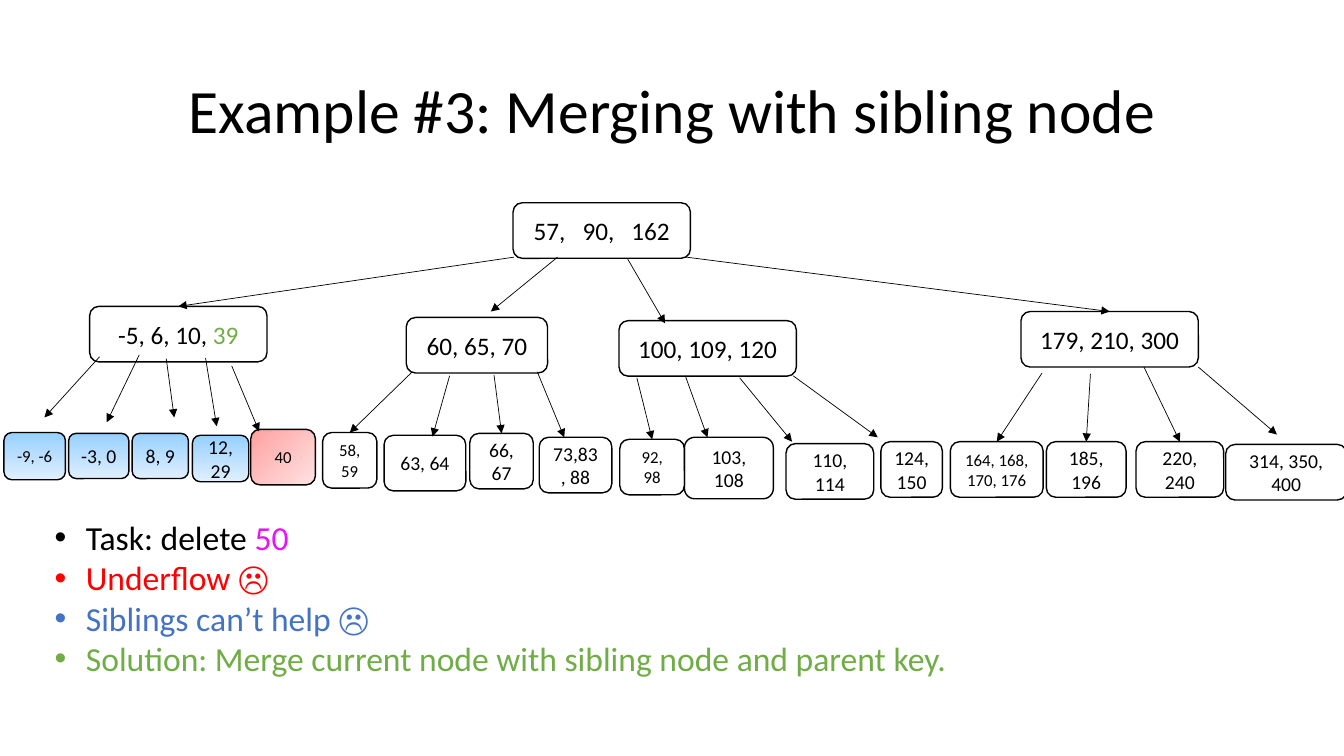
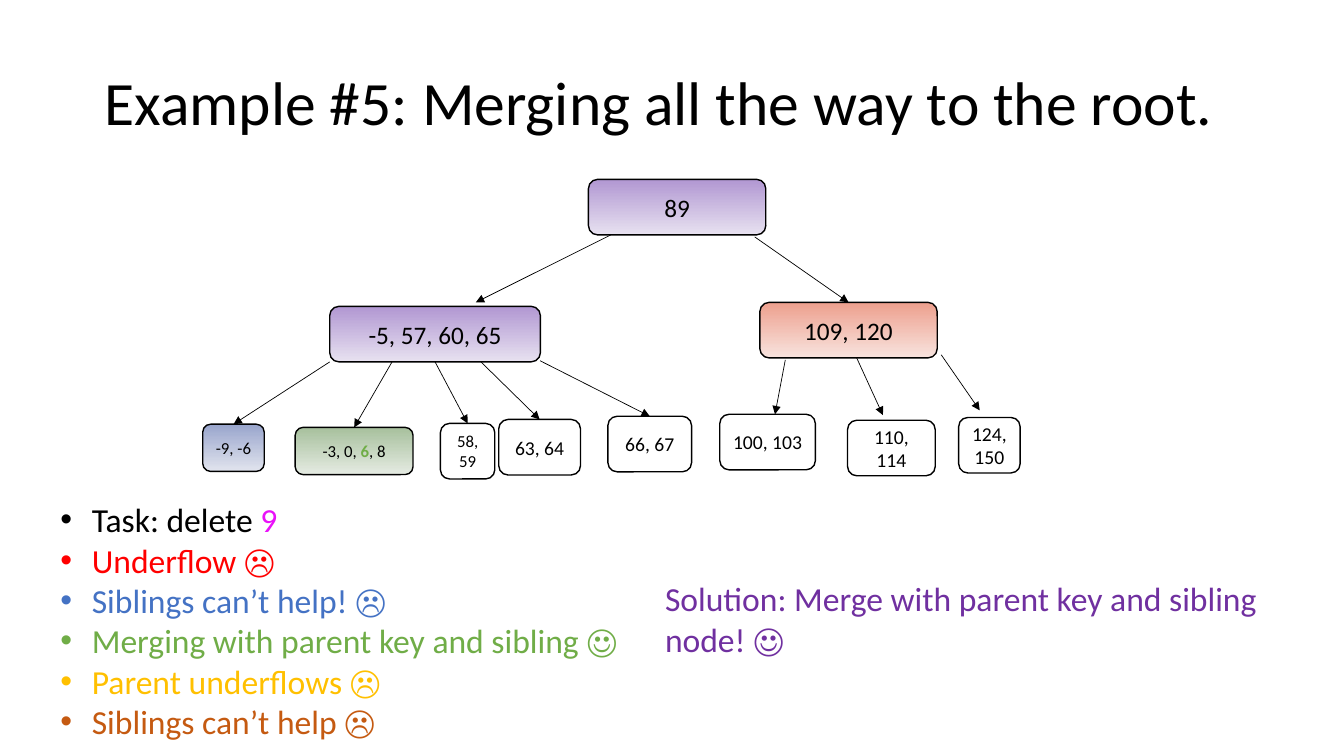
from lxml.etree import SubElement
from pptx import Presentation
from pptx.dml.color import RGBColor
from pptx.enum.shapes import MSO_CONNECTOR, MSO_SHAPE
from pptx.enum.text import MSO_ANCHOR, MSO_AUTO_SIZE, PP_ALIGN
from pptx.oxml.ns import qn
from pptx.util import Cm, Pt

FONT = "Calibri"
HUES = {
    "ink": "000000", "pink": "E911F9", "red": "FF0000", "blue": "4472C4",
    "green": "70AD47", "gold": "FFC000", "rust": "C55A11", "plum": "7030A0",
}
FADES = {
    "sky": ("96D0FF", "E0EFFF", 270),
    "rose": ("FFA0A0", "FFE3E3", 315),
    "lilac": ("B197D2", "E7E1F0", 270),
    "coral": ("EDA08E", "F8E3DE", 270),
    "slate": ("99A5CC", "E1E4EE", 270),
    "sage": ("A7C09D", "E5EBE2", 270),
}
FRAME = Cm(1.4)
INDENT = Cm(0.79)


def write(par, size, runs):
    for text, hue in runs:
        run = par.add_run()
        run.text = text
        run.font.name = FONT
        run.font.size = Pt(size)
        run.font.color.rgb = RGBColor.from_string(HUES[hue])
        if text == " ":
            run._r.get_or_add_rPr().set("spc", "810")


def place(shape, left, top, width, height):
    shape.left, shape.top = Cm(left), Cm(top)
    shape.width, shape.height = Cm(width), Cm(height)


# rows: text, size, fade, left, top, width, height, arrow start, arrow tip
MERGE = [
    ([("57,", "ink"), (" ", "ink"), ("90,", "ink"), (" ", "ink"), ("162", "ink")],
     18, None, 12.93, 5.11, 4.47, 1.4, None, None),
    ([("-5, 6, 10, ", "ink"), ("39", "green")],
     18, None, 2.26, 7.72, 4.47, 1.4, (12.95, 6.48), None),
    ("60, 65, 70", 18, None, 10.24, 8, 3.56, 1.4, (14.05, 6.48), (12.37, 7.85)),
    ("100, 109, 120", 18, None, 15.6, 8.08, 4.47, 1.4, (15.82, 6.53), (16.76, 8.15)),
    ("179, 210, 300", 18, None, 25.73, 7.85, 4.47, 1.4, (17.3, 6.48), None),
    ("-9, -6", 12, "sky", 0.1, 10.9, 1.55, 1.19, (2.51, 8.99), (1.12, 10.52)),
    ("-3, 0", 14, "sky", 1.73, 10.92, 1.52, 1.14, (3.51, 8.94), (2.69, 10.64)),
    ("8, 9", 14, "sky", 3.33, 10.92, 1.42, 1.14, (4.19, 9.04), (4.39, 10.52)),
    ("12, 29", 14, "sky", 4.85, 10.97, 1.42, 1.17, (5.18, 9.02), (5.46, 10.74)),
    ("40", 12, "rose", 6.32, 10.82, 1.63, 1.4, (5.84, 9.22), (6.53, 10.87)),
    ("58, 59", 12, None, 8.13, 10.9, 1.37, 1.4, (10.39, 9.37), None),
    ("63, 64", 14, None, 9.68, 10.97, 2.06, 1.4, (11.33, 9.47), (10.9, 11)),
    ("66, 67", 14, None, 11.84, 10.92, 1.6, 1.4, (12.45, 9.45), None),
    ("73,83, 88", 14, None, 13.59, 11.02, 1.83, 1.4, (13.54, 9.37), (14.22, 11.02)),
    ("92, 98", 12, None, 15.62, 11.07, 1.63, 1.4, (16.05, 9.52), None),
    ("103, 108", 14, None, 17.25, 11.02, 2.24, 1.55, (17.27, 9.47), (17.83, 11.02)),
    ("110, 114", 14, None, 19.81, 11.18, 2.21, 1.4, (18.64, 9.52), (19.96, 11.13)),
    ("124, 150", 14, None, 22.2, 11.13, 1.55, 1.4, (19.99, 9.47), (22.12, 11.02)),
    ("164, 168, 170, 176", 12, None, 23.95, 11.13, 2.34, 1.4, (26.26, 9.4), None),
    ("185, 196", 14, None, 26.37, 11.13, 2.01, 1.4, (27.48, 9.42), None),
    ("220, 240", 14, None, 28.63, 11.13, 2.21, 1.4, (28.83, 9.25), None),
    ("314, 350, 400", 14, None, 30.89, 11.2, 3.05, 1.4, (30.2, 9.25), (32.18, 10.95)),
]
ROOT = [
    ("89", 18, "lilac", 14.83, 4.52, 4.47, 1.4, None, None),
    ("-5, 57, 60, 65", 18, "lilac", 8.31, 7.72, 5.31, 1.4, (15.39, 5.92), (11.99, 7.62)),
    ("109, 120", 18, "coral", 19.15, 7.62, 4.47, 1.4, (19.02, 5.97), None),
    ("-9, -6", 12, "slate", 5.11, 10.69, 1.55, 1.19, (8.31, 9.12), None),
    ([("-3, 0, ", "ink"), ("6", "green"), (", 8", "ink")],
     12, "sage", 7.44, 10.77, 2.97, 1.19, (9.88, 9.12), None),
    ("58, 59", 12, None, 11.1, 10.67, 1.37, 1.4, 1, None),
    ("63, 64", 14, None, 12.57, 10.57, 2.06, 1.4, (12.12, 9.12), None),
    ("66, 67", 14, None, 15.32, 10.49, 2.11, 1.4, (13.61, 9.09), None),
    ("100, 103", 14, None, 18.14, 10.44, 2.41, 1.4, (19.79, 9.07), (19.53, 10.44)),
    ("110, 114", 14, None, 21.36, 10.59, 2.21, 1.4, (21.59, 9.02), (22.25, 10.46)),
    ("124, 150", 14, None, 24.16, 10.52, 1.55, 1.4, (23.72, 8.94), (24.69, 10.34)),
]
PAGES = [
    ("Example #3: Merging with sibling node", (2.34, 1.02), MERGE,
     (1.12, 12.9, 28.07, 4.37), [
        [("Task: delete ", "ink"), ("50", "pink")],
        [("Underflow ☹", "red")],
        [("Siblings can’t help ☹", "blue")],
        [("Solution: Merge current node with sibling node and parent key.", "green")],
    ]),
    ("Example #5: Merging all the way to the root.", (2.01, 0.81), ROOT,
     (1.27, 12.45, 30.48, 6.4), [
        [("Task: delete ", "ink"), ("9", "pink")],
        [("Underflow ☹", "red")],
        [("Siblings can’t help! ☹", "blue")],
        [("Merging with parent key and sibling ☺", "green")],
        [("Parent underflows ☹", "gold")],
        [("Siblings can’t help ☹", "rust")],
    ]),
]

deck = Presentation()
deck.slide_width, deck.slide_height = Cm(33.87), Cm(19.05)

for name, spot, nodes, area, points in PAGES:
    slide = deck.slides.add_slide(deck.slide_layouts[1])
    title, body = slide.placeholders
    place(title, *spot, 29.21, 3.68)
    title.text_frame.vertical_anchor = MSO_ANCHOR.MIDDLE
    head = title.text_frame.paragraphs[0]
    head.alignment = PP_ALIGN.CENTER
    head.line_spacing = 0.9
    write(head, 44, [(name, "ink")])

    boxes = []
    for text, size, fade, left, top, width, height, start, tip in nodes:
        box = slide.shapes.add_shape(
            MSO_SHAPE.ROUNDED_RECTANGLE, Cm(left), Cm(top), Cm(width), Cm(height))
        box.shadow.inherit = False
        box.line.color.rgb = RGBColor.from_string(HUES["ink"])
        box.line.width = Pt(1)
        if fade:
            *ends, angle = FADES[fade]
            box.fill.gradient()
            box.fill.gradient_angle = angle
            for stop, tone in zip(box.fill.gradient_stops, ends):
                stop.color.rgb = RGBColor.from_string(tone)
        else:
            box.fill.background()
        frame = box.text_frame
        frame.word_wrap = True
        frame.vertical_anchor = MSO_ANCHOR.MIDDLE
        par = frame.paragraphs[0]
        par.alignment = PP_ALIGN.CENTER
        write(par, size, [(text, "ink")] if isinstance(text, str) else text)
        for run in par.runs:
            run.font.bold = run.text == "6"
        boxes.append(box)

    for box, (*_, start, tip) in zip(boxes, nodes):
        if start is None:
            continue
        x, y = start if isinstance(start, tuple) else (0, 0)
        u, v = tip or (0, 0)
        arrow = slide.shapes.add_connector(
            MSO_CONNECTOR.STRAIGHT, Cm(x), Cm(y), Cm(u), Cm(v))
        if isinstance(start, int):
            arrow.begin_connect(boxes[start], 2)
        if tip is None:
            arrow.end_connect(box, 0)
        arrow.line.color.rgb = RGBColor.from_string(HUES["ink"])
        arrow.line.width = Pt(0.5)
        SubElement(arrow.line._get_or_add_ln(), qn("a:tailEnd"), type="triangle")
        SubElement(arrow._element.spPr, qn("a:effectLst"))

    place(body, *area)
    frame = body.text_frame
    frame.auto_size = MSO_AUTO_SIZE.NONE
    for i, runs in enumerate(points):
        par = frame.add_paragraph() if i else frame.paragraphs[0]
        par.space_before = Pt(0)
        props = par._p.get_or_add_pPr()
        props.set("marL", str(INDENT))
        props.set("indent", str(-INDENT))
        write(par, 24, runs)

note = slide.shapes.add_textbox(Cm(16.51), Cm(14.45), Cm(16.94), Cm(2.31))
note.text_frame.word_wrap = True
write(note.text_frame.paragraphs[0], 24,
      [("Solution: Merge with parent key and sibling node! ☺", "plum")])

deck.save("out.pptx")
